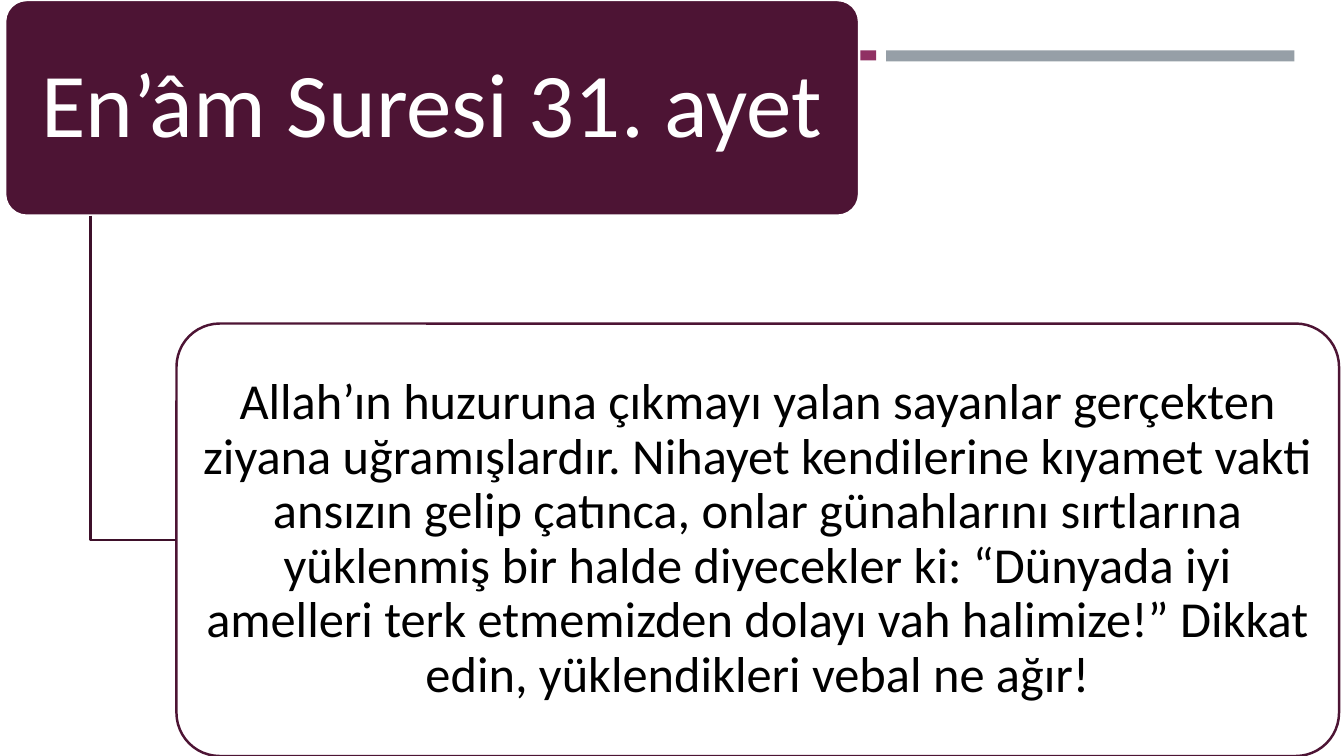
from pptx import Presentation
from pptx.dml.color import RGBColor
from pptx.enum.shapes import MSO_SHAPE as Shape
from pptx.enum.text import MSO_ANCHOR as Anchor, PP_ALIGN as Align
from pptx.oxml.xmlchemy import OxmlElement
from pptx.util import Inches, Pt

WHITE = RGBColor(0xFF, 0xFF, 0xFF)
BLACK = RGBColor(0, 0, 0)
GREY = RGBColor(0x96, 0x9F, 0xA7)
MAGENTA = RGBColor(0x90, 0x31, 0x63)
PLUM = RGBColor(0x4D, 0x14, 0x34)
DARK_PLUM = RGBColor(0x3E, 0x10, 0x2A)

WIDTH, HEIGHT = Inches(13.33), Inches(7.5)
FONT = "Calibri"
LINE_WIDTH = Pt(1.75)
CORNER = 0.1
STEM_SHARE = 0.1
BODY_OPACITY = 90

BARS = [
    {"box": (65.94, 6.67, 30.38, 1.47), "fill": GREY},
    {"box": (34.81, 6.67, 30.38, 1.33), "fill": MAGENTA},
]
TITLE = {
    "box": (0.38, 0, 63.54, 28.53), "fill": PLUM, "line": WHITE,
    "text": "En’âm Suresi 31. ayet",
    "font": {"size": Pt(65), "name": FONT}, "color": WHITE, "inset": 0.15,
}
BODY = {
    "box": (13.13, 42.8, 86.5, 57.2), "fill": WHITE, "line": PLUM,
    "text": "Allah’ın huzuruna çıkmayı yalan sayanlar gerçekten ziyana uğramışlardır. "
            "Nihayet kendilerine kıyamet vakti ansızın gelip çatınca, onlar günahlarını "
            "sırtlarına yüklenmiş bir halde diyecekler ki: “Dünyada iyi amelleri terk "
            "etmemizden dolayı vah halimize!” Dikkat edin, yüklendikleri vebal ne ağır!",
    "font": {"size": Pt(36), "name": FONT}, "color": BLACK, "inset": 0.07,
}


def set_all(target, values):
    for name, value in values.items():
        setattr(target, name, value)


def set_line(shape, color):
    shape.line.color.rgb = color
    shape.line.width = LINE_WIDTH


def add_block(slide, kind, item):
    left, top, width, height = item["box"]
    shape = slide.shapes.add_shape(
        kind, int(WIDTH * left / 100), int(HEIGHT * top / 100),
        int(WIDTH * width / 100), int(HEIGHT * height / 100))
    shape.shadow.inherit = False
    shape.fill.solid()
    shape.fill.fore_color.rgb = item["fill"]
    shape.line.fill.background()
    return shape


def add_card(slide, item):
    shape = add_block(slide, Shape.ROUNDED_RECTANGLE, item)
    shape.adjustments[0] = CORNER
    set_line(shape, item["line"])
    inset = Inches(item["inset"])
    frame = shape.text_frame
    set_all(frame, {"word_wrap": True, "vertical_anchor": Anchor.MIDDLE,
                    "margin_left": inset, "margin_right": inset,
                    "margin_top": Inches(0.05), "margin_bottom": Inches(0.05)})
    paragraph = frame.paragraphs[0]
    set_all(paragraph, {"alignment": Align.CENTER, "line_spacing": 0.9})
    run = paragraph.add_run()
    run.text = item["text"]
    set_all(run.font, item["font"])
    run.font.color.rgb = item["color"]
    return shape


def add_elbow(slide, parent, child):
    stem = int(parent.left + parent.width * STEM_SHARE)
    start = parent.top + parent.height
    middle = child.top + child.height // 2
    builder = slide.shapes.build_freeform(stem, start)
    builder.add_line_segments([(stem, middle), (child.left, middle)], close=False)
    elbow = builder.convert_to_shape()
    elbow.shadow.inherit = False
    elbow.fill.background()
    set_line(elbow, DARK_PLUM)


def set_opacity(shape, percent):
    alpha = OxmlElement("a:alpha")
    alpha.set("val", str(percent * 1000))
    shape.fill._xPr.find(".//{*}srgbClr").append(alpha)


def main():
    presentation = Presentation()
    set_all(presentation, {"slide_width": WIDTH, "slide_height": HEIGHT})
    slide = presentation.slides.add_slide(presentation.slide_layouts[6])
    for bar in BARS:
        add_block(slide, Shape.RECTANGLE, bar)
    title = add_card(slide, TITLE)
    body = add_card(slide, BODY)
    set_opacity(body, BODY_OPACITY)
    add_elbow(slide, title, body)
    presentation.save("out.pptx")


if __name__ == "__main__":
    main()
